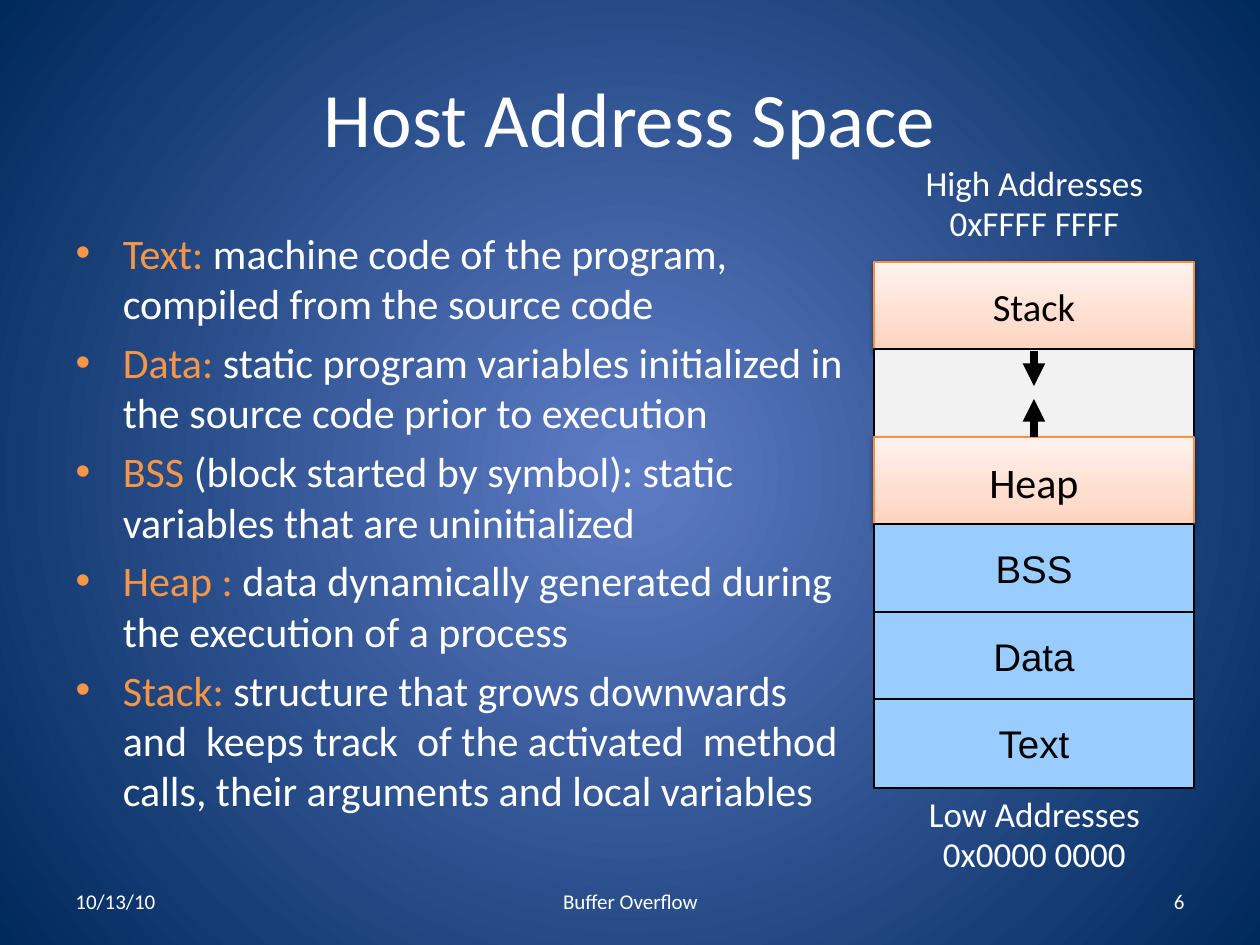
from pptx import Presentation
from pptx.dml.color import RGBColor as RGB
from pptx.enum.shapes import MSO_CONNECTOR as CONN, MSO_SHAPE as SHAPE
from pptx.enum.text import MSO_ANCHOR as ANCH, PP_ALIGN as ALIGN
from pptx.oxml import parse_xml
from pptx.oxml.ns import nsdecls, qn
from pptx.util import Pt

PX = 914400 // 126
HEX = {"white": "FFFFFF", "black": "000000", "key": "F79646", "edge": "F69240",
       "gap": "F2F2F2", "fixed": "99CCFF", "glow": "5E7CC5", "navy": "00295C"}
WARM = [(0, "FFD2BD"), (35, "FFDED0"), (100, "FFF2ED")]


def style(run, size, color, face="Calibri"):
    form = {"size": Pt(size), "name": face}
    for name, value in form.items():
        setattr(run.font, name, value)
    run.font.color.rgb = RGB.from_string(HEX[color])


def blend(props, stops, way):
    marks = "".join(f'<a:gs pos="{pos * 1000}"><a:srgbClr val="{color}"/></a:gs>'
                    for pos, color in stops)
    fill = parse_xml(f'<a:gradFill {nsdecls("a")} rotWithShape="1">'
                     f'<a:gsLst>{marks}</a:gsLst>{way}</a:gradFill>')
    props.replace(props.find(qn("a:noFill")), fill)


deck = Presentation()
deck.slide_width, deck.slide_height = 1260 * PX, 945 * PX
slide = deck.slides.add_slide(deck.slide_layouts[1])
shapes = slide.shapes

# Background
slide.background.fill.background()
blend(slide.element.find(".//" + qn("p:bgPr")),
      [(0, HEX["glow"]), (100, HEX["navy"])],
      '<a:path path="circle"><a:fillToRect l="50000" t="50000" r="50000" b="50000"/></a:path>')

# Title and list
title, body = shapes.title, slide.placeholders[1]
for holder, box in [(title, (63, 38, 1134, 158)), (body, (63, 221, 798, 640))]:
    for name, value in zip(("left", "top", "width", "height"), box):
        setattr(holder, name, value * PX)
title.text_frame.text = "Host Address Space"
style(title.text_frame.paragraphs[0].runs[0], 44, "white")

items = [
    ("Text:", " machine code of the program, compiled from the source code"),
    ("Data: ", "static program variables initialized in the source code prior to execution"),
    ("BSS", " (block started by symbol): static variables that are uninitialized"),
    ("Heap : ", "data dynamically generated during the execution of a process"),
    ("Stack: ", "structure that grows downwards and  keeps track  of the activated  "
                "method calls, their arguments and local variables"),
]
frame = body.text_frame
for i, item in enumerate(items):
    para = frame.add_paragraph() if i else frame.paragraphs[0]
    for text, color in zip(item, ("key", "white")):
        run = para.add_run()
        run.text = text
        style(run, 24, color)

# Footer and address labels
labels = [
    ("10/13/10", (63, 876, 294, 50), 12, ALIGN.LEFT, ANCH.MIDDLE, 1),
    ("Buffer Overflow", (431, 876, 399, 50), 12, ALIGN.CENTER, ANCH.MIDDLE, 1),
    ("6", (903, 876, 294, 50), 12, ALIGN.RIGHT, ANCH.MIDDLE, 1),
    ("Low Addresses\n0x0000 0000", (861, 789, 347, 93), 20, ALIGN.CENTER, ANCH.TOP, 0.95),
    ("High Addresses\n0xFFFF FFFF", (861, 158, 347, 93), 20, ALIGN.CENTER, ANCH.TOP, 0.95),
]
for text, box, size, align, anchor, space in labels:
    frame = shapes.add_textbox(*(v * PX for v in box)).text_frame
    frame.word_wrap = True
    frame.vertical_anchor = anchor
    frame.text = text
    for para in frame.paragraphs:
        para.alignment, para.line_spacing = align, space
        style(para.runs[0], size, "white")

# Memory segments, from high to low addresses
parts = [("Stack", "warm", 22, "Calibri"), ("", "gap", 22, "Calibri"),
         ("Heap", "warm", 24, "Calibri"), ("BSS", "fixed", 22, "Arial"),
         ("Data", "fixed", 22, "Arial"), ("Text", "fixed", 22, "Arial")]
rects = []
for i, (text, kind, size, face) in enumerate(parts):
    rect = shapes.add_shape(SHAPE.RECTANGLE, 874 * PX, (262 + i * 175 // 2) * PX,
                            320 * PX, 89 * PX)
    rects.append(rect)
    rect.shadow.inherit = False
    rect.line.width = Pt(0.75)
    rect.line.color.rgb = RGB.from_string(HEX["edge" if kind == "warm" else "black"])
    if kind == "warm":
        rect.fill.background()
        props = rect.element.spPr
        blend(props, WARM, '<a:lin ang="16200000" scaled="0"/>')
        props.find(qn("a:effectLst")).append(parse_xml(
            f'<a:outerShdw {nsdecls("a")} blurRad="40000" dist="20000" dir="5400000" '
            'rotWithShape="0"><a:srgbClr val="000000"><a:alpha val="38000"/>'
            '</a:srgbClr></a:outerShdw>'))
    else:
        rect.fill.solid()
        rect.fill.fore_color.rgb = RGB.from_string(HEX[kind])
    if text:
        frame = rect.text_frame
        frame.word_wrap = False
        frame.vertical_anchor = ANCH.MIDDLE
        frame.text = text
        frame.paragraphs[0].alignment = ALIGN.CENTER
        style(frame.paragraphs[0].runs[0], size, "black", face)

# Growth arrows
for rect, side, start, end in [(rects[0], 2, 351, 386), (rects[2], 0, 437, 399)]:
    arrow = shapes.add_connector(CONN.STRAIGHT, 1034 * PX, start * PX, 1034 * PX, end * PX)
    arrow.begin_connect(rect, side)
    arrow.line.width = Pt(4.31)
    arrow.line.color.rgb = RGB.from_string(HEX["black"])
    arrow.line._get_or_add_ln().append(parse_xml(f'<a:tailEnd {nsdecls("a")} type="triangle"/>'))
    arrow.element.spPr.append(parse_xml(f'<a:effectLst {nsdecls("a")}/>'))

deck.save("out.pptx")
